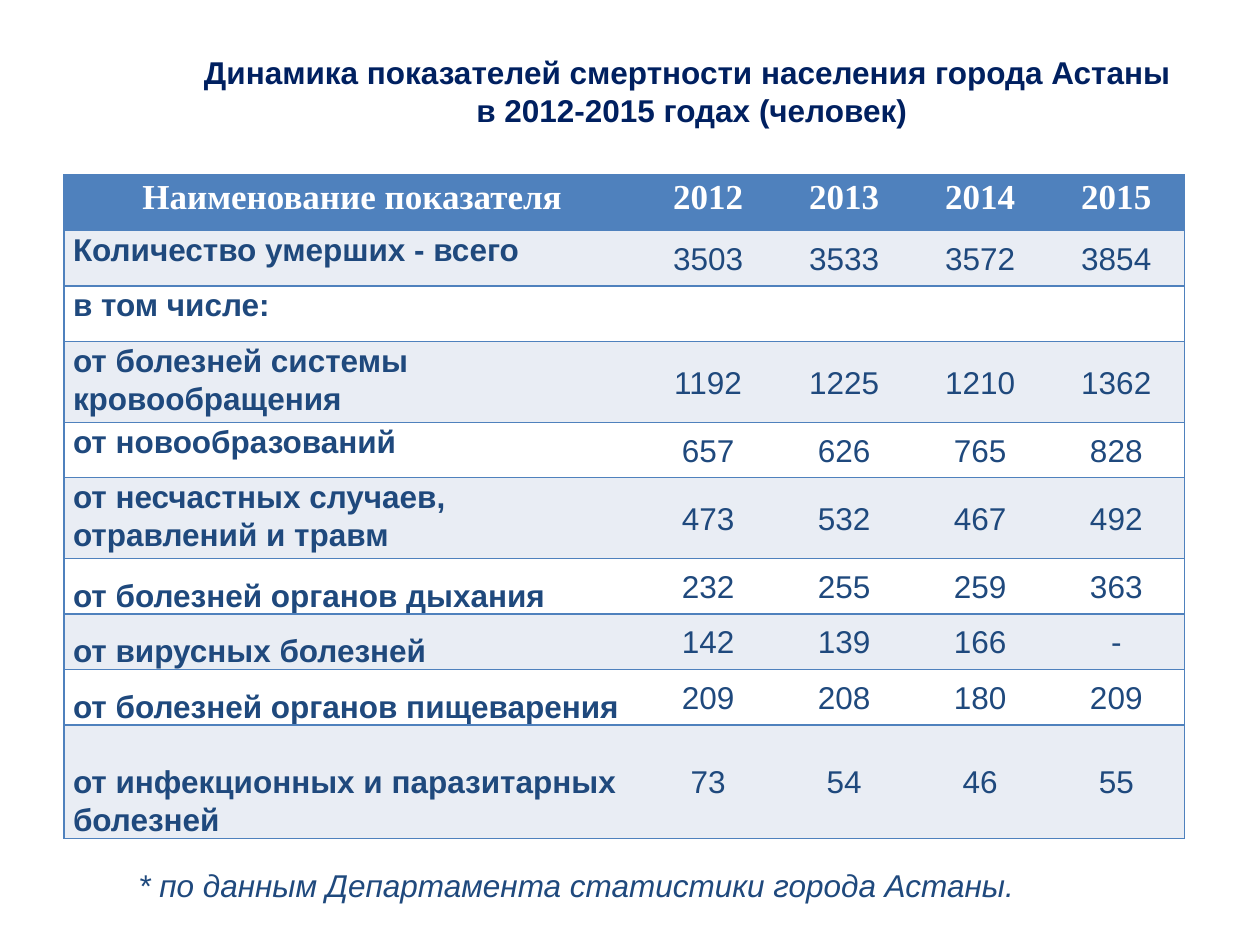
"""Builds a slide with a table of mortality figures for Astana, 2012-2015."""
from dataclasses import dataclass

from lxml import etree
from pptx import Presentation, util as u
from pptx.dml.color import RGBColor
from pptx.enum import text
from pptx.oxml import ns

TITLE = "Динамика показателей смертности населения города Астаны \vв 2012-2015 годах (человек)"
NOTE = "* по данным Департамента статистики города Астаны."
HEADER = ("Наименование показателя", "2012", "2013", "2014", "2015")
ROWS = [
    ("Количество умерших - всего", "3503", "3533", "3572", "3854"),
    ("в том числе:", "", "", "", ""),
    ("от болезней системы кровообращения", "1192", "1225", "1210", "1362"),
    ("от новообразований", "657", "626", "765", "828"),
    ("от несчастных случаев, отравлений и травм", "473", "532", "467", "492"),
    ("от болезней органов дыхания", "232", "255", "259", "363"),
    ("от вирусных болезней", "142", "139", "166", "-"),
    ("от болезней органов пищеварения", "209", "208", "180", "209"),
    ("от инфекционных и паразитарных болезней", "73", "54", "46", "55"),
]
FIRST_BOTTOM_ROW = 6
COLUMN_WIDTHS = [4.57] + [1.08] * 4
ROW_HEIGHTS = [0.44] * len(ROWS) + [0.9]
LEFT, TABLE_TOP = 0.51, 1.39
NO_STYLE = "{2D5ABB26-0587-4C30-8999-92F81FD0307C}"


@dataclass(frozen=True)
class Theme:
    body_font: str = "Arial"
    header_font: str = "Times New Roman"
    body_size: int = 18
    header_size: int = 20
    title: str = "002060"
    ink: str = "1F497D"
    accent: str = "4F81BD"
    white: str = "FFFFFF"
    band: str = "E9EDF4"
    border: int = 1


THEME = Theme()
ALIGN, ANCHOR = text.PP_ALIGN, text.MSO_ANCHOR


def style(para, color, align, bold=False, italic=False, header=False):
    para.alignment = align
    font = para.font
    font.name = THEME.header_font if header else THEME.body_font
    font.size = u.Pt(THEME.header_size if header else THEME.body_size)
    font.bold, font.italic = bold, italic
    font.color.rgb = RGBColor.from_string(color)


def add_text(page, words, left, top, width, height):
    box = page.shapes.add_textbox(*map(u.Inches, (left, top, width, height)))
    frame = box.text_frame
    frame.word_wrap = True
    frame.vertical_anchor = ANCHOR.MIDDLE
    para = frame.paragraphs[0]
    para.text = words
    return frame, para


def add_borders(cell, sides):
    properties = cell._tc.get_or_add_tcPr()
    for side in sides:
        line = etree.SubElement(properties, ns.qn(f"a:ln{side}"), w=str(u.Pt(THEME.border)))
        fill = etree.SubElement(line, ns.qn("a:solidFill"))
        etree.SubElement(fill, ns.qn("a:srgbClr"), val=THEME.accent)


def fill_cell(cell, words, row, column):
    header, label = row == 0, column == 0
    cell.margin_left = cell.margin_right = u.Inches(0.07)
    cell.margin_top = cell.margin_bottom = 0
    if header or label:
        cell.vertical_anchor = ANCHOR.BOTTOM if row >= FIRST_BOTTOM_ROW else ANCHOR.TOP
    else:
        cell.vertical_anchor = ANCHOR.MIDDLE
    edges = {0: "LTB", len(HEADER) - 1: "RTB"}
    add_borders(cell, edges.get(column, "TB"))
    cell.fill.solid()
    back = THEME.accent if header else THEME.band if row % 2 else THEME.white
    cell.fill.fore_color.rgb = RGBColor.from_string(back)
    para = cell.text_frame.paragraphs[0]
    para.text = words
    para.line_spacing = 1.07
    style(para, THEME.white if header else THEME.ink,
          ALIGN.LEFT if label and not header else ALIGN.CENTER,
          bold=header or label, header=header)


def add_figures(page):
    records = [HEADER] + ROWS
    frame = page.shapes.add_table(
        len(records), len(HEADER), u.Inches(LEFT), u.Inches(TABLE_TOP),
        u.Inches(sum(COLUMN_WIDTHS)), u.Inches(sum(ROW_HEIGHTS)))
    table = frame.table
    table.horz_banding = False
    table._tbl.tblPr.find(ns.qn("a:tableStyleId")).text = NO_STYLE
    for column, width in zip(table.columns, COLUMN_WIDTHS):
        column.width = u.Inches(width)
    for line, height in zip(table.rows, ROW_HEIGHTS):
        line.height = u.Inches(height)
    for row, record in enumerate(records):
        for column, words in enumerate(record):
            fill_cell(table.cell(row, column), words, row, column)


def main():
    deck = Presentation()
    deck.slide_width, deck.slide_height = u.Inches(10), u.Inches(7.5)
    page = deck.slides.add_slide(deck.slide_layouts[6])

    _, title = add_text(page, TITLE, 1.46, 0.21, 8.06, 1.03)
    style(title, THEME.title, ALIGN.CENTER, bold=True)
    add_figures(page)

    frame, note = add_text(page, NOTE, LEFT, 6.82, 7.76, 0.4)
    frame.word_wrap = False
    frame.auto_size = text.MSO_AUTO_SIZE.SHAPE_TO_FIT_TEXT
    style(note, THEME.ink, ALIGN.JUSTIFY, italic=True)
    note._p.get_or_add_pPr().set("indent", str(u.Inches(0.49)))

    deck.save("out.pptx")


if __name__ == "__main__":
    main()
